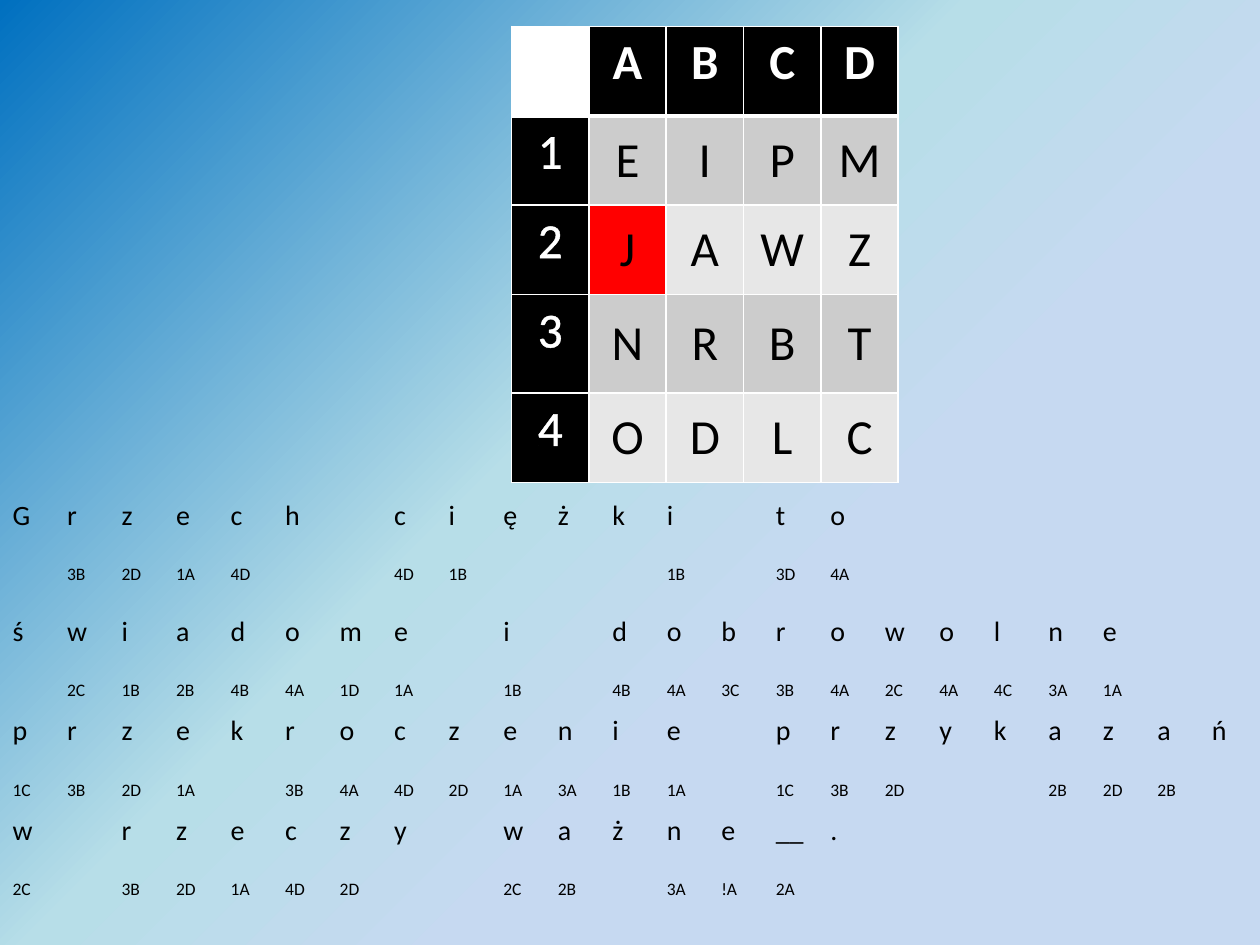
from lxml import etree
from pptx import Presentation
from pptx.dml.color import RGBColor
from pptx.enum import text
from pptx.oxml import ns
from pptx.util import Pt

COLORS = {
    "blue": "0070C0", "aqua": "B7DEE8", "pale": "C6D9F1",
    "white": "FFFFFF", "black": "000000", "red": "FF0000",
    "dark_band": "CCCCCC", "light_band": "E7E7E7",
}
BACKGROUND_STOPS = [(0, "blue"), (44, "aqua"), (64, "pale"), (100, "pale")]
FONT = "Calibri"
NO_STYLE = "{2D5ABB26-0587-4C30-8999-92F81FD0307C}"

KEY_COLUMNS = "ABCD"
KEY_ROWS = ["EIPM", "JAWZ", "NRBT", "ODLC"]
HIGHLIGHT = "J"

# Each line of the sentence with the key codes below it; "-" is a letter without a code.
SENTENCE = [
    (list("Grzech ciężki to"),
     "- 3B 2D 1A 4D - - 4D 1B - - - 1B - 3D 4A"),
    (list("świadome i dobrowolne"),
     "- 2C 1B 2B 4B 4A 1D 1A - 1B - 4B 4A 3C 3B 4A 2C 4A 4C 3A 1A"),
    (list("przekroczenie przykazań"),
     "1C 3B 2D 1A - 3B 4A 4D 2D 1A 3A 1B 1A - 1C 3B 2D - - 2B 2D 2B"),
    (list("w rzeczy ważne") + ["__", "."],
     "2C - 3B 2D 1A 4D 2D - - 2C 2B - 3A !A 2A"),
]


def rgb(name):
    return RGBColor.from_string(COLORS[name])


def sub(parent, tag, **attrs):
    return etree.SubElement(parent, ns.qn(tag), attrs)


def add_color(parent, tag, name):
    sub(sub(parent, tag), "a:srgbClr", val=COLORS[name])


def set_background(s):
    fill = s.background.fill
    fill.gradient()
    fill.gradient_angle = 315
    stops = s.element.find(".//" + ns.qn("a:gsLst"))
    for stop in list(stops):
        stops.remove(stop)
    for percent, name in BACKGROUND_STOPS:
        stop = sub(stops, "a:gs", pos=str(percent * 1000))
        sub(stop, "a:srgbClr", val=COLORS[name])


def add_plain_table(s, left, top, col_width, n_cols, row_heights):
    """Add a table without any built-in style."""
    frame = s.shapes.add_table(len(row_heights), n_cols, Pt(left), Pt(top),
                               Pt(col_width * n_cols), Pt(sum(row_heights)))
    table = frame.table
    table.first_row = table.horz_banding = False
    frame.element.find(".//" + ns.qn("a:tableStyleId")).text = NO_STYLE
    for column in table.columns:
        column.width = Pt(col_width)
    for row, height in zip(table.rows, row_heights):
        row.height = Pt(height)
    return table


def write(cell, value, size, color="black", align=None, bold=False):
    p = cell.text_frame.paragraphs[0]
    p.alignment = align
    if not value.strip():
        # The end mark keeps an empty cell from stretching its row
        sub(p._p, "a:endParaRPr", sz=str(size * 100))
        return None
    r = p.add_run()
    r.text = value
    for name, setting in {"size": Pt(size), "name": FONT, "bold": bold}.items():
        setattr(r.font, name, setting)
    r.font.color.rgb = rgb(color)
    return r


def outline_text(r, color, width):
    ln = etree.Element(ns.qn("a:ln"), w=str(Pt(width)))
    add_color(ln, "a:solidFill", color)
    r.font._element.insert(0, ln)


def set_borders(cell, color, **widths):
    tc_pr = cell._tc.get_or_add_tcPr()
    for side in "LRTB":
        ln = sub(tc_pr, "a:ln" + side, w=str(Pt(widths.get(side, 1))))
        add_color(ln, "a:solidFill", color)


def key_fill(row, value):
    if value == HIGHLIGHT:
        return "red"
    return "dark_band" if row % 2 else "light_band"


def add_key(s):
    """Add the letter grid whose coordinates are the codes."""
    table = add_plain_table(s, 292.3, 15.1, 44.2, len(KEY_COLUMNS) + 1,
                            [51.1, 51.1, 51.1, 56.2, 51.1])
    grid = [" " + KEY_COLUMNS] + [f"{i}{row}" for i, row in enumerate(KEY_ROWS, 1)]
    for i, row in enumerate(grid):
        for j, value in enumerate(row):
            cell = table.cell(i, j)
            header = i == 0 or j == 0
            r = write(cell, value, 28, "white" if header else "black",
                      text.PP_ALIGN.CENTER, bold=i == 0)
            set_borders(cell, "white", T=3 if i == 1 else 1, B=3 if i == 0 else 1)
            if header:
                fill = "black" if r else "white"
            else:
                fill = key_fill(i, value)
                cell.vertical_anchor = text.MSO_ANCHOR.MIDDLE
            cell.fill.solid()
            cell.fill.fore_color.rgb = rgb(fill)
            if i and not j:
                outline_text(r, "white", 0.75)


def add_sentence(s):
    """Add the lines of letters, each above its row of codes."""
    n_cols = max(len(letters) for letters, _ in SENTENCE)
    heights = [37.4, 28.8] + [37.4, 19.2] * (len(SENTENCE) - 1)
    table = add_plain_table(s, 0, 281.5, 31.18, n_cols, heights)
    for i, (letters, codes) in enumerate(SENTENCE):
        code_cells = codes.replace("-", " - ").split()
        code_cells = ["" if code == "-" else code for code in code_cells]
        for k, (values, size) in enumerate([(letters, 16), (code_cells, 10)]):
            padded = values + [""] * (n_cols - len(values))
            for j, value in enumerate(padded):
                cell = table.cell(2 * i + k, j)
                write(cell, value, size)
                cell.fill.background()


def main():
    prs = Presentation()
    prs.slide_width, prs.slide_height = Pt(720), Pt(540)
    s = prs.slides.add_slide(prs.slide_layouts[6])
    set_background(s)
    add_sentence(s)
    add_key(s)
    prs.save("out.pptx")


if __name__ == "__main__":
    main()
